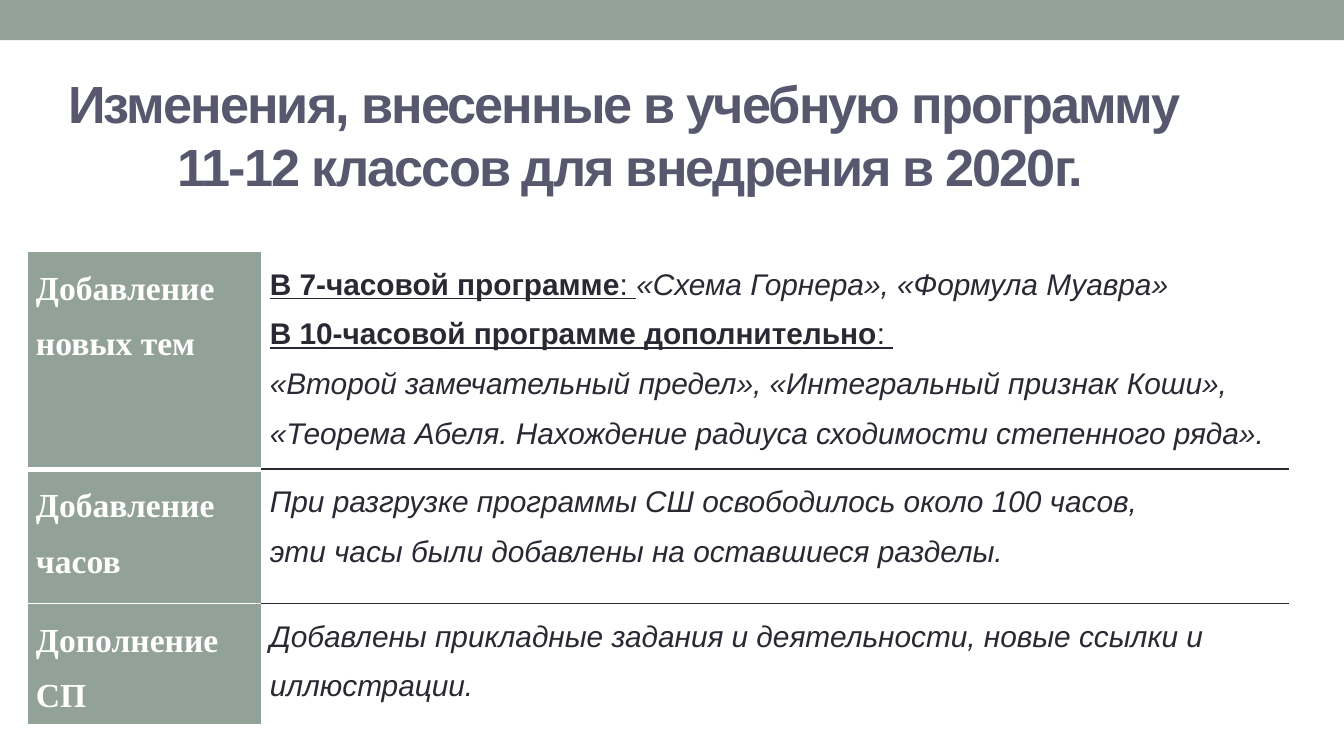
from lxml import etree
from pptx import Presentation
from pptx.dml.color import RGBColor
from pptx.enum.shapes import MSO_SHAPE
from pptx.enum.text import MSO_ANCHOR, MSO_AUTO_SIZE, PP_ALIGN
from pptx.oxml.ns import qn
from pptx.util import Pt

RECTANGLE = MSO_SHAPE.RECTANGLE
MIDDLE = MSO_ANCHOR.MIDDLE
CENTER = PP_ALIGN.CENTER
NO_AUTOFIT = MSO_AUTO_SIZE.NONE

COLORS = {"sage": "93A299", "title": "57576E", "text": "292934", "white": "FFFFFF"}
HEADING = {"font": "Times New Roman", "size": 18, "color": "white", "bold": True}
BODY = {"font": "Arial", "size": 16, "color": "text"}
STRONG = {"bold": True, "underline": True}
UNDERLINED = {"underline": True}
ITALIC = {"italic": True}

TITLE = "Изменения, внесенные в учебную программу \v11-12 классов для внедрения в 2020г."
CHANGES = [
    ("Добавление новых тем", [
        [("В 7-часовой программе", STRONG), (": ", UNDERLINED),
         ("«Схема Горнера», «Формула Муавра»", ITALIC)],
        [("В 10-часовой программе дополнительно", STRONG), (": ", UNDERLINED)],
        [("«Второй замечательный предел», «Интегральный признак Коши», "
          "«Теорема Абеля. Нахождение радиуса сходимости степенного ряда».", ITALIC)],
    ]),
    ("Добавление часов", [
        [("При разгрузке программы СШ освободилось около 100 часов,", ITALIC)],
        [("эти часы были добавлены на оставшиеся разделы.", ITALIC)],
    ]),
    ("Дополнение СП", [
        [("Добавлены прикладные задания и деятельности, новые ссылки и иллюстрации.", ITALIC)],
    ]),
]
COLUMN_WIDTHS = [125.3, 550]
ROW_HEIGHTS = [116.6, 72, 64.8]
WHITE_LINE = ("white", 1)
THICK_LINE = ("white", 3)
DARK_LINE = ("text", 1)
HEADING_RULES = [WHITE_LINE, THICK_LINE, WHITE_LINE, WHITE_LINE]
BODY_RULES = [WHITE_LINE, DARK_LINE, DARK_LINE, WHITE_LINE]


class SlideBuilder:
    def __init__(self, slide):
        self.slide = slide

    def color(self, name):
        return RGBColor.from_string(COLORS[name])

    def format_run(self, run, font, size, color, bold=False, italic=False, underline=False):
        run.font.name = font
        run.font.size = Pt(size)
        run.font.color.rgb = self.color(color)
        run.font.bold = bold
        run.font.italic = italic
        run.font.underline = underline

    def band(self, left, top, width, height):
        shape = self.slide.shapes.add_shape(RECTANGLE, Pt(left), Pt(top), Pt(width), Pt(height))
        shape.shadow.inherit = False
        shape.fill.solid()
        shape.fill.fore_color.rgb = self.color("sage")
        shape.line.fill.background()

    def title(self, text, left, top, width, height):
        title = self.slide.shapes.title
        title.left, title.top = Pt(left), Pt(top)
        title.width, title.height = Pt(width), Pt(height)
        frame = title.text_frame
        frame.text = text
        frame.word_wrap = True
        frame.auto_size = NO_AUTOFIT
        frame.vertical_anchor = MIDDLE
        paragraph = frame.paragraphs[0]
        paragraph.alignment = CENTER
        for run in paragraph.runs:
            self.format_run(run, "Arial", 28, "title", bold=True)
            run.font._element.set("spc", "-100")

    def border(self, cell, side, rule):
        color, width = rule
        properties = cell._tc.get_or_add_tcPr()
        line = etree.SubElement(properties, qn(f"a:ln{side}"), w=str(Pt(width)))
        fill = etree.SubElement(line, qn("a:solidFill"))
        etree.SubElement(fill, qn("a:srgbClr"), val=COLORS[color])

    def cell(self, cell, paragraphs, style, top_rule, bottom_rule, fill=None):
        cell.margin_left = cell.margin_right = Pt(4.5)
        cell.margin_top = cell.margin_bottom = 0
        rules = {"L": WHITE_LINE, "R": WHITE_LINE, "T": top_rule, "B": bottom_rule}
        for side, rule in rules.items():
            self.border(cell, side, rule)
        if fill:
            cell.fill.solid()
            cell.fill.fore_color.rgb = self.color(fill)
        else:
            cell.fill.background()
        frame = cell.text_frame
        frame.text = "\n".join("" for _ in paragraphs)
        for paragraph, parts in zip(frame.paragraphs, paragraphs):
            paragraph.line_spacing = 1.5
            for text, emphasis in parts:
                run = paragraph.add_run()
                run.text = text
                self.format_run(run, **style, **emphasis)

    def table(self, changes, left, top):
        frame = self.slide.shapes.add_table(
            len(changes), len(COLUMN_WIDTHS), Pt(left), Pt(top),
            Pt(sum(COLUMN_WIDTHS)), Pt(sum(ROW_HEIGHTS)))
        table = frame.table
        table.first_row = table.horz_banding = False
        for column, width in zip(table.columns, COLUMN_WIDTHS):
            column.width = Pt(width)
        for index, (heading, body) in enumerate(changes):
            table.rows[index].height = Pt(ROW_HEIGHTS[index])
            self.cell(table.cell(index, 0), [[(heading, {})]], HEADING,
                      *HEADING_RULES[index:index + 2], fill="sage")
            self.cell(table.cell(index, 1), body, BODY, *BODY_RULES[index:index + 2])


def main():
    presentation = Presentation()
    presentation.slide_width, presentation.slide_height = Pt(720), Pt(405)
    builder = SlideBuilder(presentation.slides.add_slide(presentation.slide_layouts[5]))
    builder.band(0, 0, 720, 21.6)
    builder.title(TITLE, 13.7, 54.7, 648, 34)
    builder.table(CHANGES, 14.8, 134.8)
    presentation.save("out.pptx")


if __name__ == "__main__":
    main()
